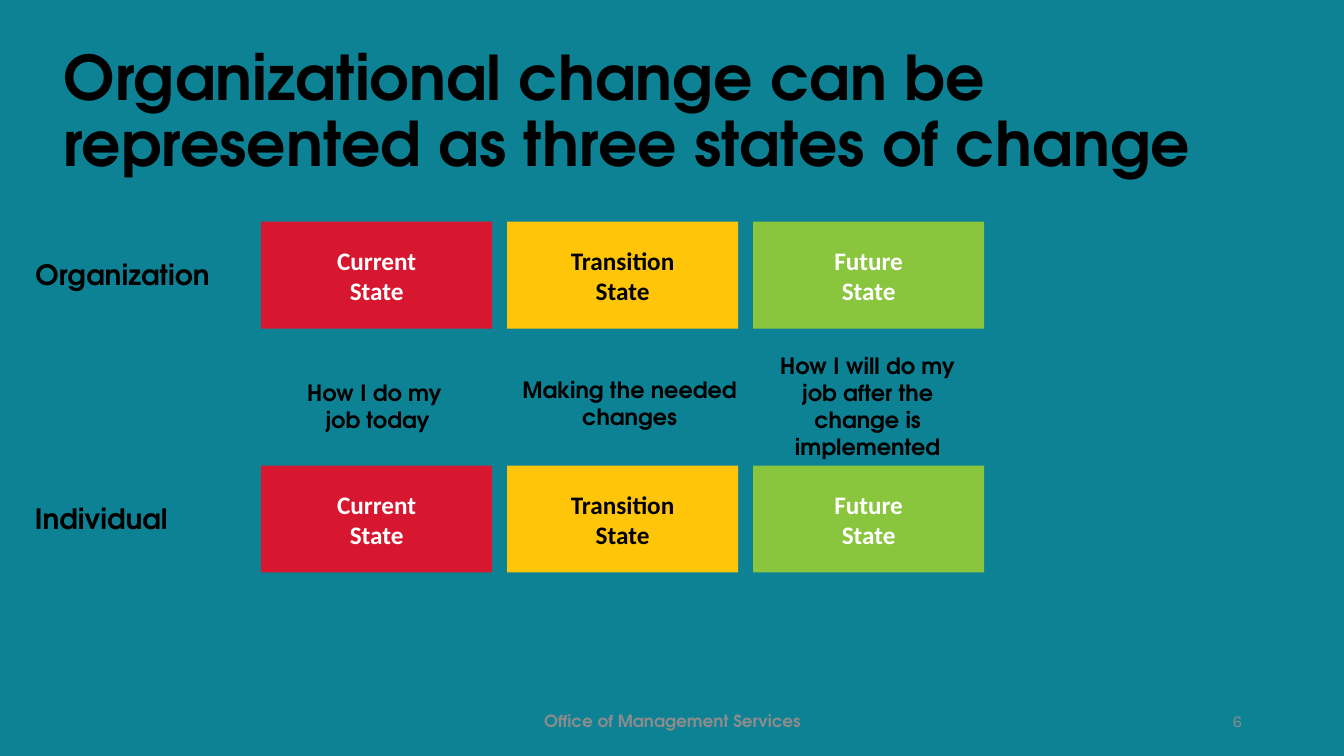
from dataclasses import dataclass

from pptx import Presentation
from pptx.dml.color import RGBColor
from pptx.enum.shapes import MSO_SHAPE
from pptx.enum.text import MSO_ANCHOR, MSO_AUTO_SIZE, PP_ALIGN
from pptx.util import Inches, Pt

RECTANGLE = MSO_SHAPE.RECTANGLE
TOP, MIDDLE = MSO_ANCHOR.TOP, MSO_ANCHOR.MIDDLE
LEFT, CENTER, RIGHT = PP_ALIGN.LEFT, PP_ALIGN.CENTER, PP_ALIGN.RIGHT
FIT_SHAPE = MSO_AUTO_SIZE.SHAPE_TO_FIT_TEXT


@dataclass(frozen=True)
class Theme:
    background: str = "0D8295"
    dark: str = "000000"
    light: str = "FFFFFF"
    muted: str = "8C8C8C"
    red: str = "D7172F"
    yellow: str = "FFC508"
    green: str = "8AC53E"
    heading_font: str = "TeX Gyre Adventor"
    state_font: str = "Calibri"
    number_font: str = "Karla"
    title_size: int = 44
    label_size: int = 20
    state_size: int = 18
    caption_size: int = 16
    footer_size: int = 12


THEME = Theme()

# Name, fill and text colour of each state, one per column
STATES = [
    ("Current", THEME.red, THEME.light),
    ("Transition", THEME.yellow, THEME.dark),
    ("Future", THEME.green, THEME.light),
]
# Text, offset from the diagram's left and top, width, height
CAPTIONS = [
    ("How I do my \vjob today", 0.01, 1.51, 2.29, 0.64),
    ("Making the needed changes", 2.44, 1.48, 2.43, 0.64),
    ("How I will do my job after the change is implemented", 4.87, 1.24, 2.29, 1.18),
]
# Text and width of each row label
ROW_LABELS = [("Organization", 1.95), ("Individual", 1.53)]

STATE_WIDTH, STATE_HEIGHT = 2.29, 1.06
COLUMN_PITCH, ROW_PITCH = 2.44, 2.42
LABEL_HEIGHT = 0.44


def style_text(text_frame, size, color, font=THEME.heading_font, align=CENTER,
               bold=True, spacing=None):
    for paragraph in text_frame.paragraphs:
        paragraph.alignment = align
        paragraph.line_spacing = spacing
        paragraph.font.size = Pt(size)
        paragraph.font.name = font
        paragraph.font.bold = bold
        paragraph.font.color.rgb = RGBColor.from_string(color)


def add_text(slide, text, box, size, color=THEME.dark, anchor=MIDDLE, wrap=True,
             grow=False, **style):
    text_frame = slide.shapes.add_textbox(*map(Inches, box)).text_frame
    text_frame.word_wrap = wrap
    text_frame.vertical_anchor = anchor
    if grow:
        text_frame.auto_size = FIT_SHAPE
    text_frame.text = text
    style_text(text_frame, size, color, **style)


def add_state(slide, name, fill, color, box):
    shape = slide.shapes.add_shape(RECTANGLE, *map(Inches, box))
    shape.shadow.inherit = False
    shape.fill.solid()
    shape.fill.fore_color.rgb = RGBColor.from_string(fill)
    shape.line.fill.background()
    text_frame = shape.text_frame
    text_frame.margin_left = text_frame.margin_right = Inches(0.2)
    text_frame.margin_top = text_frame.margin_bottom = Inches(0.1)
    text_frame.vertical_anchor = MIDDLE
    text_frame.text = f"{name}\nState"
    style_text(text_frame, THEME.state_size, color, THEME.state_font)


def add_row_labels(slide, left, top):
    """Centre each label on its row of states, whose first row starts at top."""
    offset = (STATE_HEIGHT - LABEL_HEIGHT) / 2
    for row, (text, width) in enumerate(ROW_LABELS):
        box = (left, top + row * ROW_PITCH + offset, width, LABEL_HEIGHT)
        add_text(slide, text, box, THEME.label_size, anchor=TOP, wrap=False, grow=True)


def add_state_diagram(slide, left, top):
    for row in range(len(ROW_LABELS)):
        for column, (name, fill, color) in enumerate(STATES):
            box = (left + column * COLUMN_PITCH, top + row * ROW_PITCH,
                   STATE_WIDTH, STATE_HEIGHT)
            add_state(slide, name, fill, color, box)
    for text, across, down, width, height in CAPTIONS:
        add_text(slide, text, (left + across, top + down, width, height),
                 THEME.caption_size, grow=True)


def add_footer(slide, top, height):
    add_text(slide, "Office of Management Services", (4.42, top, 4.5, height),
             THEME.footer_size, THEME.muted)
    add_text(slide, "6", (9.42, top, 3, height), THEME.footer_size, THEME.muted,
             font=THEME.number_font, align=RIGHT, bold=False)


def main():
    presentation = Presentation()
    presentation.slide_width = Inches(13.33)
    presentation.slide_height = Inches(7.5)
    slide = presentation.slides.add_slide(presentation.slide_layouts[6])
    slide.background.fill.solid()
    slide.background.fill.fore_color.rgb = RGBColor.from_string(THEME.background)

    add_text(slide, "Organizational change can be represented as three states of change",
             (0.53, 0.4, 11.88, 1.45), THEME.title_size, align=LEFT, spacing=0.9)
    add_row_labels(slide, left=0.24, top=2.2)
    add_state_diagram(slide, left=2.59, top=2.2)
    add_footer(slide, top=6.95, height=0.4)
    presentation.save("out.pptx")


if __name__ == "__main__":
    main()
